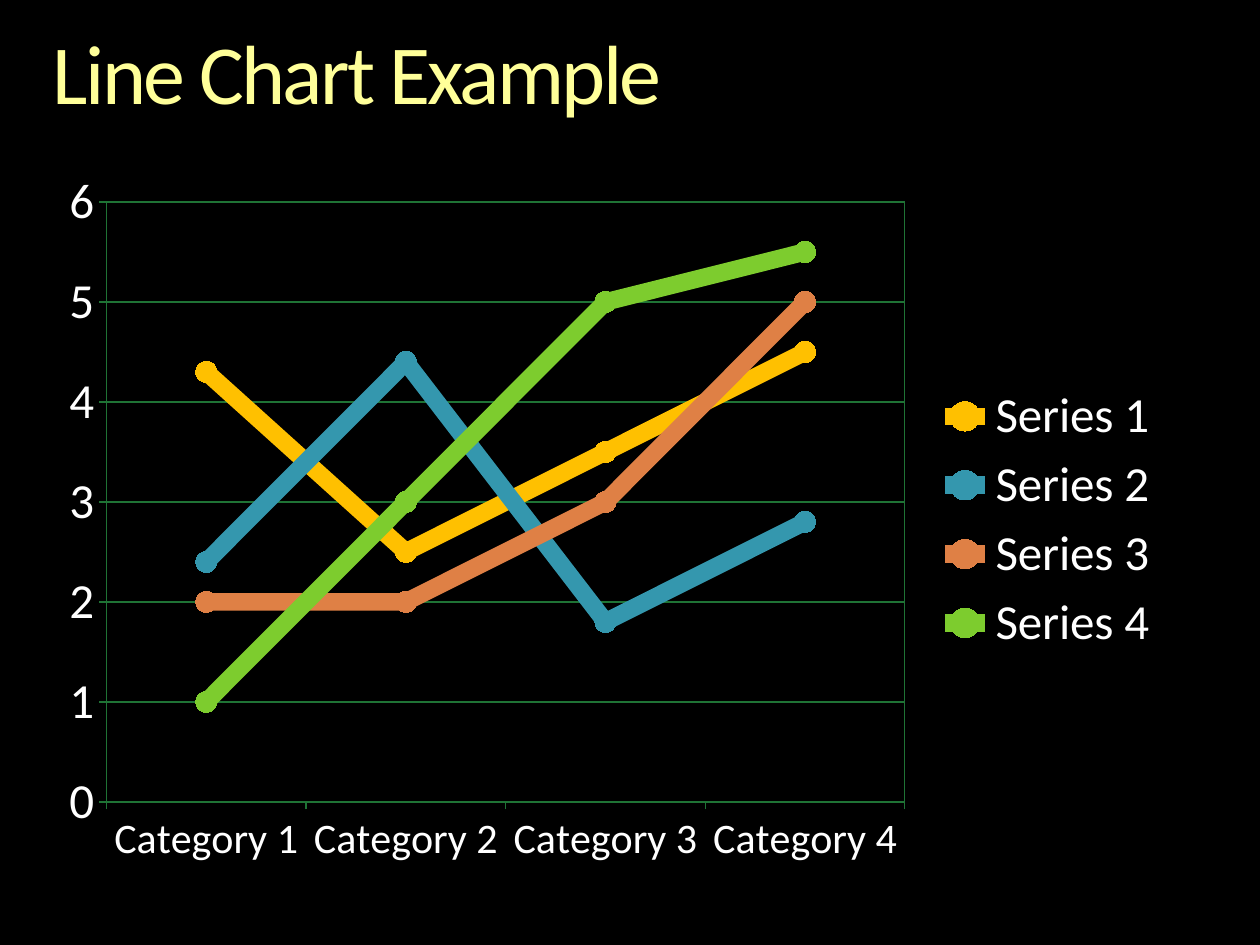
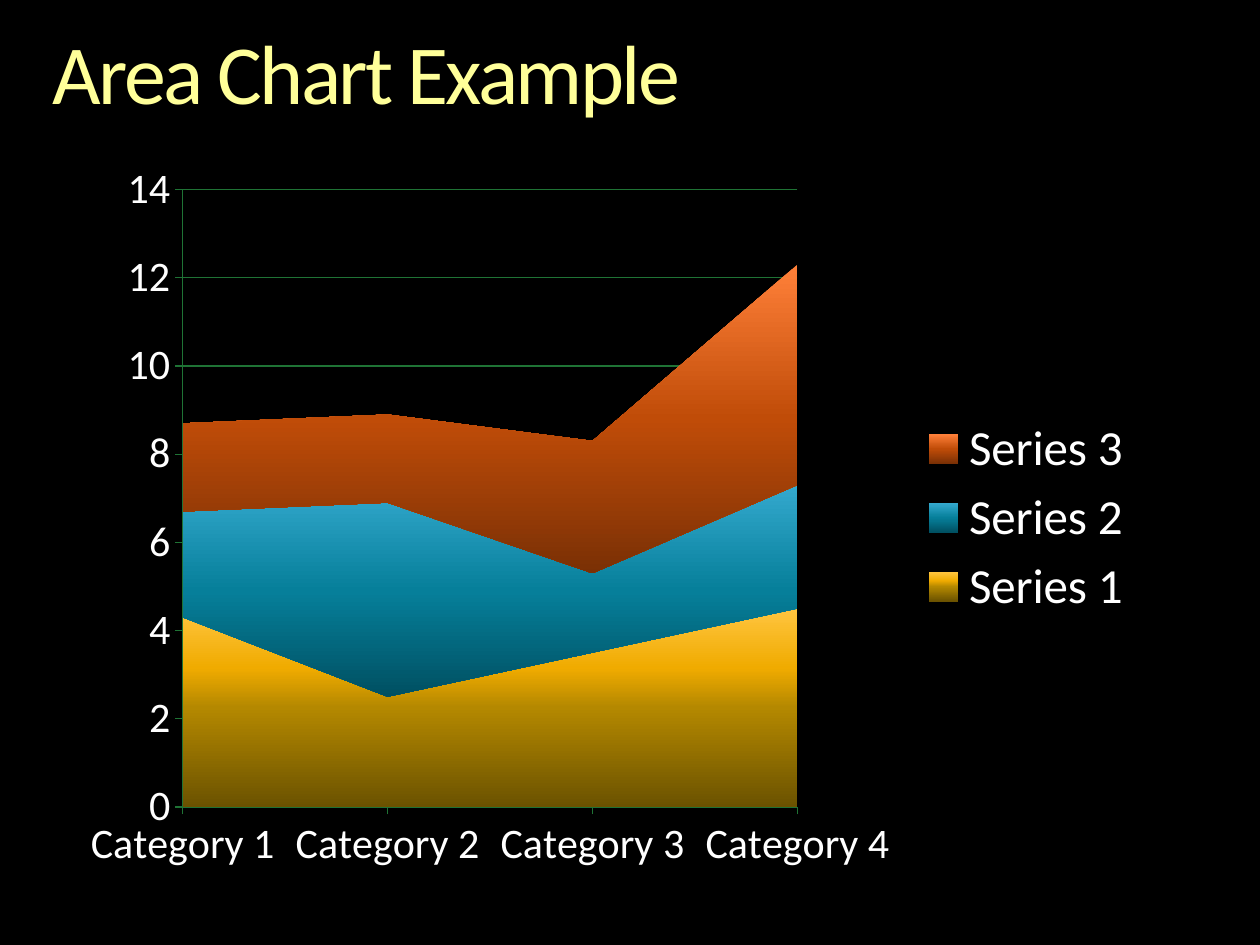
from pptx import Presentation
from pptx.chart.data import CategoryChartData
from pptx.dml.color import RGBColor
from pptx.enum.chart import XL_CHART_TYPE, XL_LEGEND_POSITION, XL_MARKER_STYLE, XL_TICK_MARK
from pptx.enum.text import MSO_ANCHOR, MSO_AUTO_SIZE, PP_ALIGN
from pptx.oxml import parse_xml
from pptx.oxml.ns import nsdecls, qn
from pptx.util import Inches, Pt

COLORS = {
    "background": "000000",
    "text": "FFFFFF",
    "grid": "1F7335",
    "Series 1": "FFC000",
    "Series 2": "3497AE",
    "Series 3": "DF8045",
    "Series 4": "7DCC2E",
}
GRADIENTS = {
    "title": [(0, "FFFFB9"), (36, "FFFF99"), (86, "F6AE1E")],
    "Series 1": [(0, "FFC540"), (30, "F0AB00"), (50, "B48800"), (100, "6B5200")],
    "Series 2": [(0, "34A9CE"), (50, "067F9A"), (100, "005062")],
    "Series 3": [(0, "FF8039"), (50, "C04C08"), (100, "7A3005")],
}
FONT = "Calibri"
CATEGORIES = [f"Category {n}" for n in range(1, 5)]
VALUES = {
    "Series 1": (4.3, 2.5, 3.5, 4.5),
    "Series 2": (2.4, 4.4, 1.8, 2.8),
    "Series 3": (2, 2, 3, 5),
    "Series 4": (1, 3, 5, 5.5),
}


def rgb(name):
    return RGBColor.from_string(COLORS[name])


def set_gradient(fill, element, stops):
    fill.gradient()
    fill.gradient_angle = 270
    gs_list = element.xpath(".//a:gsLst")[0]
    for stop in list(gs_list):
        gs_list.remove(stop)
    for position, color in stops:
        gs_list.append(parse_xml(
            f'<a:gs {nsdecls("a")} pos="{position * 1000}">'
            f'<a:srgbClr val="{color}"/></a:gs>'))


def write_text(tf, text, size, gradient, spacing=0, line_spacing=1.0):
    p = tf.paragraphs[0]
    p.alignment = PP_ALIGN.LEFT
    p.line_spacing = line_spacing
    r = p.add_run()
    r.text = text
    r.font.name = FONT
    r.font.size = Pt(size)
    set_gradient(r.font.fill, r._r, GRADIENTS[gradient])
    r._r.get_or_add_rPr().set("spc", str(int(spacing * 100)))


def add_titled_slide(prs, title):
    s = prs.slides.add_slide(prs.slide_layouts[5])
    sp = s.shapes.title
    sp.left, sp.top, sp.width, sp.height = map(Inches, (0.42, 0.25, 9.17, 0.73))
    tf = sp.text_frame
    tf.margin_left = tf.margin_right = tf.margin_top = tf.margin_bottom = 0
    tf.vertical_anchor = MSO_ANCHOR.TOP
    tf.word_wrap = True
    tf.auto_size = MSO_AUTO_SIZE.SHAPE_TO_FIT_TEXT
    write_text(tf, title, size=48, gradient="title", spacing=-1.5, line_spacing=0.9)
    return s


def layout_xml(box, inner=False):
    target = '<c:layoutTarget val="inner"/>' if inner else ""
    modes = '<c:xMode val="edge"/><c:yMode val="edge"/>'
    sizes = "".join(f'<c:{tag} val="{value}"/>' for tag, value in zip("xywh", box))
    return parse_xml(f'<c:layout {nsdecls("c")}><c:manualLayout>'
                     f'{target}{modes}{sizes}</c:manualLayout></c:layout>')


def style_line(line, color="grid", width=0.75):
    line.color.rgb = rgb(color)
    line.width = Pt(width)


def style_axis(axis, size):
    axis.major_tick_mark = XL_TICK_MARK.OUTSIDE
    axis.minor_tick_mark = XL_TICK_MARK.NONE
    axis.tick_labels.font.size = Pt(size)
    style_line(axis.format.line)


def add_chart(s, kind, names, box, plot_box, legend_box, value_size):
    data = CategoryChartData()
    data.categories = CATEGORIES
    for name in names:
        data.add_series(name, VALUES[name])
    chart = s.shapes.add_chart(kind, *map(Inches, box), data).chart
    chart.has_title = False
    chart.font.name = FONT
    chart.font.size = Pt(18)
    chart.font.color.rgb = rgb("text")

    style_axis(chart.category_axis, 24)
    style_axis(chart.value_axis, value_size)
    chart.value_axis.has_major_gridlines = True
    style_line(chart.value_axis.major_gridlines.format.line)

    chart.has_legend = True
    legend = chart.legend
    legend.position = XL_LEGEND_POSITION.RIGHT
    legend.include_in_layout = False
    legend.font.size = Pt(28)
    legend.font.name = FONT
    legend.font.color.rgb = rgb("text")
    legend._element.find(qn("c:legendPos")).addnext(layout_xml(legend_box))

    plot_area = chart._chartSpace.chart.plotArea
    for layout in plot_area.findall(qn("c:layout")):
        plot_area.remove(layout)
    plot_area.insert(0, layout_xml(plot_box, inner=True))
    return chart


def style_line_series(series):
    series.smooth = False
    style_line(series.format.line, series.name, 10)
    marker = series.marker
    marker.style = XL_MARKER_STYLE.CIRCLE
    marker.size = 12
    marker.format.fill.solid()
    marker.format.fill.fore_color.rgb = rgb(series.name)
    marker.format.line.fill.background()


def style_area_series(series):
    set_gradient(series.format.fill, series._element, GRADIENTS[series.name])
    series.format.line.fill.background()


def add_line_slide(prs):
    s = add_titled_slide(prs, "Line Chart Example")
    chart = add_chart(s, XL_CHART_TYPE.LINE_MARKERS, list(VALUES),
                      box=(0.38, 1.26, 8.95, 5.73),
                      plot_box=(0.052, 0.06, 0.708, 0.831),
                      legend_box=(0.785, 0.31, 0.2, 0.39), value_size=28)
    chart.plots[0].vary_by_categories = False
    for series in chart.plots[0].series:
        style_line_series(series)
    chart._chartSpace.chart.plotArea.append(parse_xml(
        f'<c:spPr {nsdecls("c", "a")}><a:noFill/><a:ln w="9525"><a:solidFill>'
        f'<a:srgbClr val="{COLORS["grid"]}"/></a:solidFill></a:ln></c:spPr>'))


def add_area_slide(prs):
    s = add_titled_slide(prs, "Area Chart Example")
    chart = add_chart(s, XL_CHART_TYPE.AREA_STACKED, list(VALUES)[:3],
                      box=(0.56, 1.19, 8.56, 5.84),
                      plot_box=(0.104, 0.054, 0.57, 0.839),
                      legend_box=(0.77, 0.35, 0.2, 0.3), value_size=24)
    for series in chart.plots[0].series:
        style_area_series(series)
    cross = chart.value_axis._element.find(qn("c:crossBetween"))
    if cross is not None:
        cross.set("val", "midCat")


def main():
    prs = Presentation()
    prs.slide_width, prs.slide_height = Inches(10), Inches(7.5)
    background = prs.slide_master.background.fill
    background.solid()
    background.fore_color.rgb = rgb("background")
    add_line_slide(prs)
    add_area_slide(prs)
    prs.save("out.pptx")


if __name__ == "__main__":
    main()
